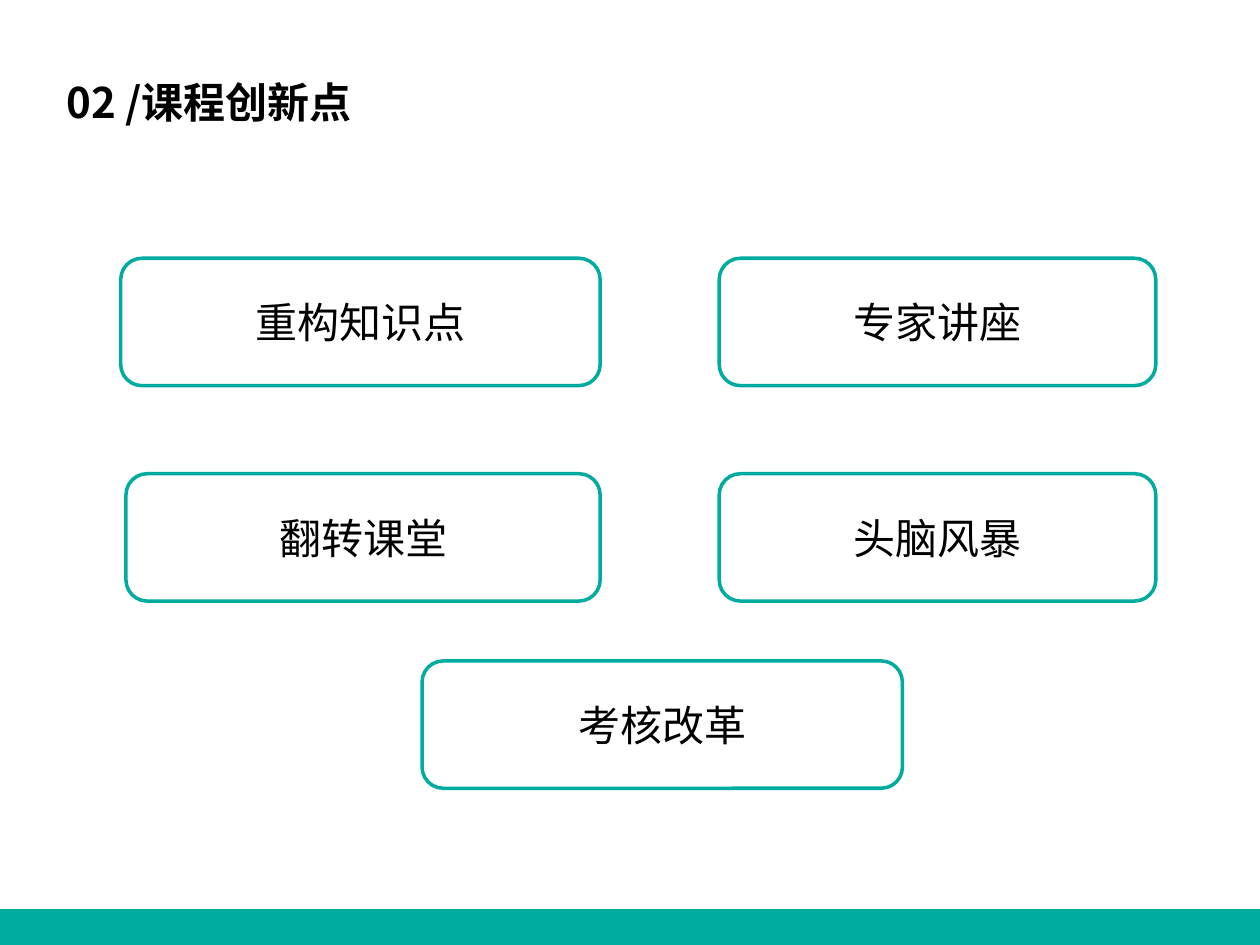
from lxml.etree import SubElement
from pptx import Presentation
from pptx.dml.color import RGBColor
from pptx.enum.shapes import MSO_SHAPE
from pptx.enum.text import MSO_ANCHOR, MSO_AUTO_SIZE, PP_ALIGN
from pptx.oxml.ns import qn
from pptx.util import Pt

TEAL = "00AB9F"
FONT = "Noto Sans CJK SC"


def color(code):
    return RGBColor.from_string(code)


def write(frame, text, bold=False):
    """Add one run, with the font set for Latin and Chinese alike."""
    run = frame.paragraphs[0].add_run()
    run.text = text
    run.font.size = Pt(24)
    run.font.bold = bold
    run.font.color.rgb = color("000000")
    run.font.name = FONT
    SubElement(run.font._element, qn("a:ea")).set("typeface", FONT)


deck = Presentation()
deck.slide_width, deck.slide_height = Pt(720), Pt(540)
slide = deck.slides.add_slide(deck.slide_layouts[6])
shapes = slide.shapes

# Footer band
band = shapes.add_shape(MSO_SHAPE.RECTANGLE, Pt(0), Pt(519.5), Pt(720), Pt(20.5))
band.shadow.inherit = False
band.fill.solid()
band.fill.fore_color.rgb = color(TEAL)
band.line.fill.background()

# Title
title = shapes.add_textbox(Pt(31), Pt(40.3), Pt(416), Pt(36))
title.text_frame.word_wrap = True
title.text_frame.auto_size = MSO_AUTO_SIZE.SHAPE_TO_FIT_TEXT
write(title.text_frame, "02 /课程创新点", bold=True)

# Innovation points: text, left, top, width
points = [
    ("重构知识点", 69, 147.6, 274),
    ("翻转课堂", 72, 270.7, 271),
    ("专家讲座", 411, 147.6, 249.5),
    ("考核改革", 241.2, 377.7, 274.5),
    ("头脑风暴", 411, 270.7, 249.5),
]
for text, left, top, width in points:
    box = shapes.add_shape(
        MSO_SHAPE.ROUNDED_RECTANGLE, Pt(left), Pt(top), Pt(width), Pt(72.8)
    )
    box.shadow.inherit = False
    box.fill.background()
    box.line.color.rgb = color(TEAL)
    box.line.width = Pt(2)
    frame = box.text_frame
    frame.word_wrap = True
    frame.vertical_anchor = MSO_ANCHOR.MIDDLE
    frame.paragraphs[0].alignment = PP_ALIGN.CENTER
    write(frame, text)

deck.save("out.pptx")
